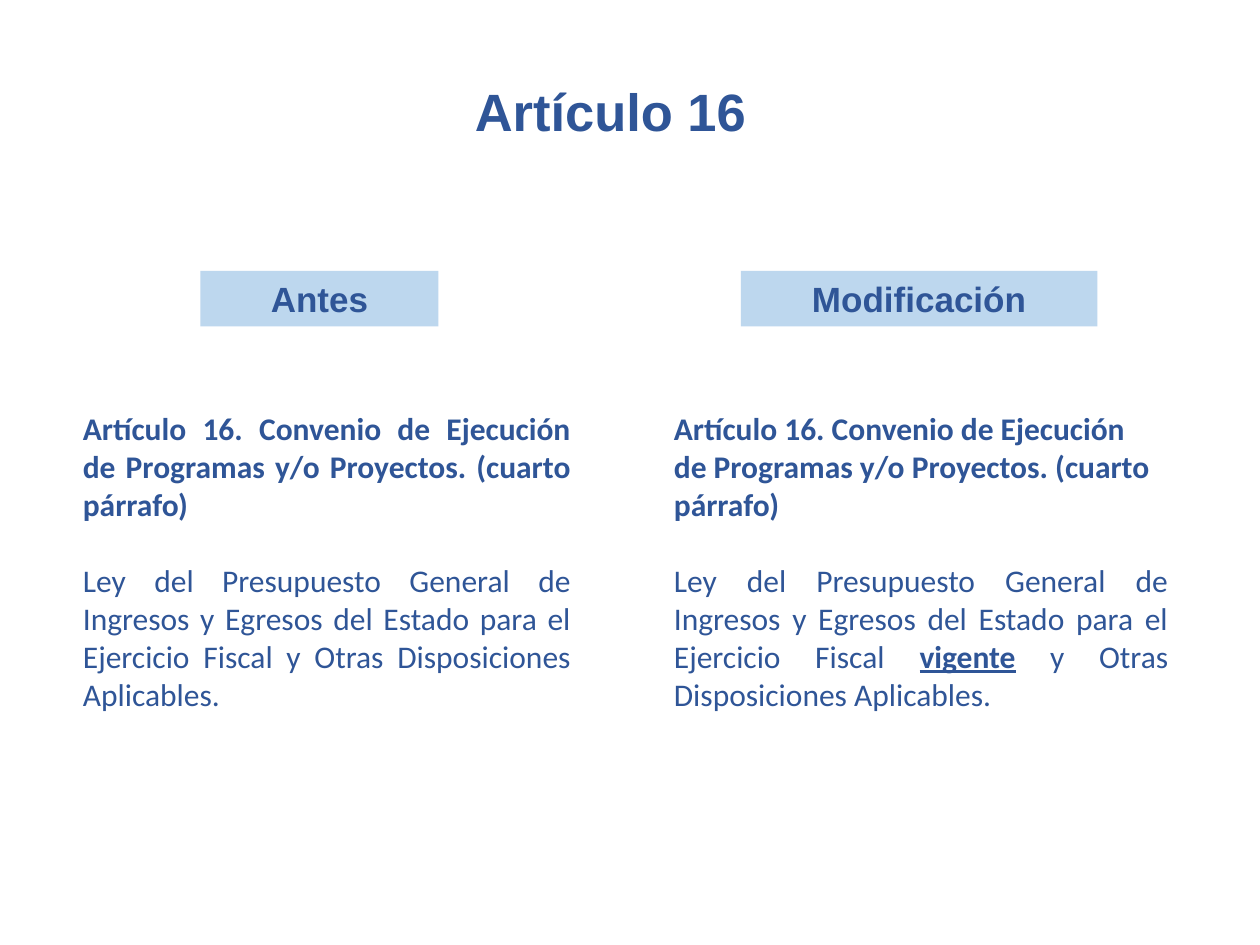
from pptx import Presentation
from pptx.dml.color import RGBColor
from pptx.enum.shapes import MSO_SHAPE
from pptx.enum.text import MSO_ANCHOR, PP_ALIGN
from pptx.util import Inches, Pt

RECT = MSO_SHAPE.RECTANGLE
TOP, MIDDLE = MSO_ANCHOR.TOP, MSO_ANCHOR.MIDDLE
LEFT, CENTER, JUSTIFY = PP_ALIGN.LEFT, PP_ALIGN.CENTER, PP_ALIGN.JUSTIFY
COLUMNS, ROWS = 100, 75


def rgb(value):
    return RGBColor.from_string(value)


class Deck:
    ink = "2F5597"
    band = "BDD7EE"
    heading_font = "Arial"
    body_font = "Calibri"
    title_size, label_size, body_size = 30, 20, 18
    paragraph_gap = 22

    def __init__(self, prs):
        self.prs = prs
        self.s = prs.slides.add_slide(prs.slide_layouts[6])

    def box(self, col, row, cols, rows):
        dx, dy = self.prs.slide_width / COLUMNS, self.prs.slide_height / ROWS
        return [round(v) for v in (col * dx, row * dy, cols * dx, rows * dy)]

    def run(self, p, text, size, font, bold=True, underline=False):
        r = p.add_run()
        r.text = text
        r.font.size = Pt(size)
        r.font.name = font
        r.font.bold = bold
        if underline:
            r.font.underline = True
        r.font.color.rgb = rgb(self.ink)

    def heading(self, sp, text, size, anchor):
        tf = sp.text_frame
        tf.word_wrap = True
        tf.vertical_anchor = anchor
        p = tf.paragraphs[0]
        p.alignment = CENTER
        self.run(p, text, size, self.heading_font)

    def title(self, text, *place):
        sp = self.s.shapes.add_textbox(*self.box(*place))
        self.heading(sp, text, self.title_size, TOP)

    def label(self, text, *place):
        sp = self.s.shapes.add_shape(RECT, *self.box(*place))
        sp.shadow.inherit = False
        sp.fill.solid()
        sp.fill.fore_color.rgb = rgb(self.band)
        sp.line.fill.background()
        self.heading(sp, text, self.label_size, MIDDLE)

    def article(self, titles, title_align, body, *place):
        tf = self.s.shapes.add_textbox(*self.box(*place)).text_frame
        tf.word_wrap = True
        for i, text in enumerate(titles):
            p = tf.add_paragraph() if i else tf.paragraphs[0]
            p.alignment = title_align
            self.run(p, text, self.body_size, self.body_font)
        p = tf.add_paragraph()
        p.alignment = JUSTIFY
        p.space_before = Pt(self.paragraph_gap)
        for text, strong in body:
            self.run(p, text, self.body_size, self.body_font, strong, strong)


def main():
    prs = Presentation()
    prs.slide_width, prs.slide_height = Inches(10), Inches(7.5)
    deck = Deck(prs)

    deck.article(
        ["Artículo 16. Convenio de Ejecución de Programas y/o Proyectos. (cuarto párrafo)"],
        JUSTIFY,
        [("Ley del Presupuesto General de Ingresos y Egresos del Estado para el "
          "Ejercicio Fiscal y Otras Disposiciones Aplicables.", False)],
        5.6, 32, 40.7, 30.5)
    deck.article(
        ["Artículo 16. Convenio de Ejecución",
         "de Programas y/o Proyectos. (cuarto párrafo)"],
        LEFT,
        [("Ley del Presupuesto General de Ingresos y Egresos del Estado para el "
          "Ejercicio Fiscal ", False),
         ("vigente", True),
         (" y Otras Disposiciones Aplicables.", False)],
        52.5, 32, 41.2, 29.8)
    deck.title("Artículo 16", 33.5, 5.8, 29.9, 6.1)
    for text, col, cols in (("Antes", 15.9, 18.9), ("Modificación", 58.8, 28.3)):
        deck.label(text, col, 21.5, cols, 4.4)

    prs.save("out.pptx")


if __name__ == "__main__":
    main()
